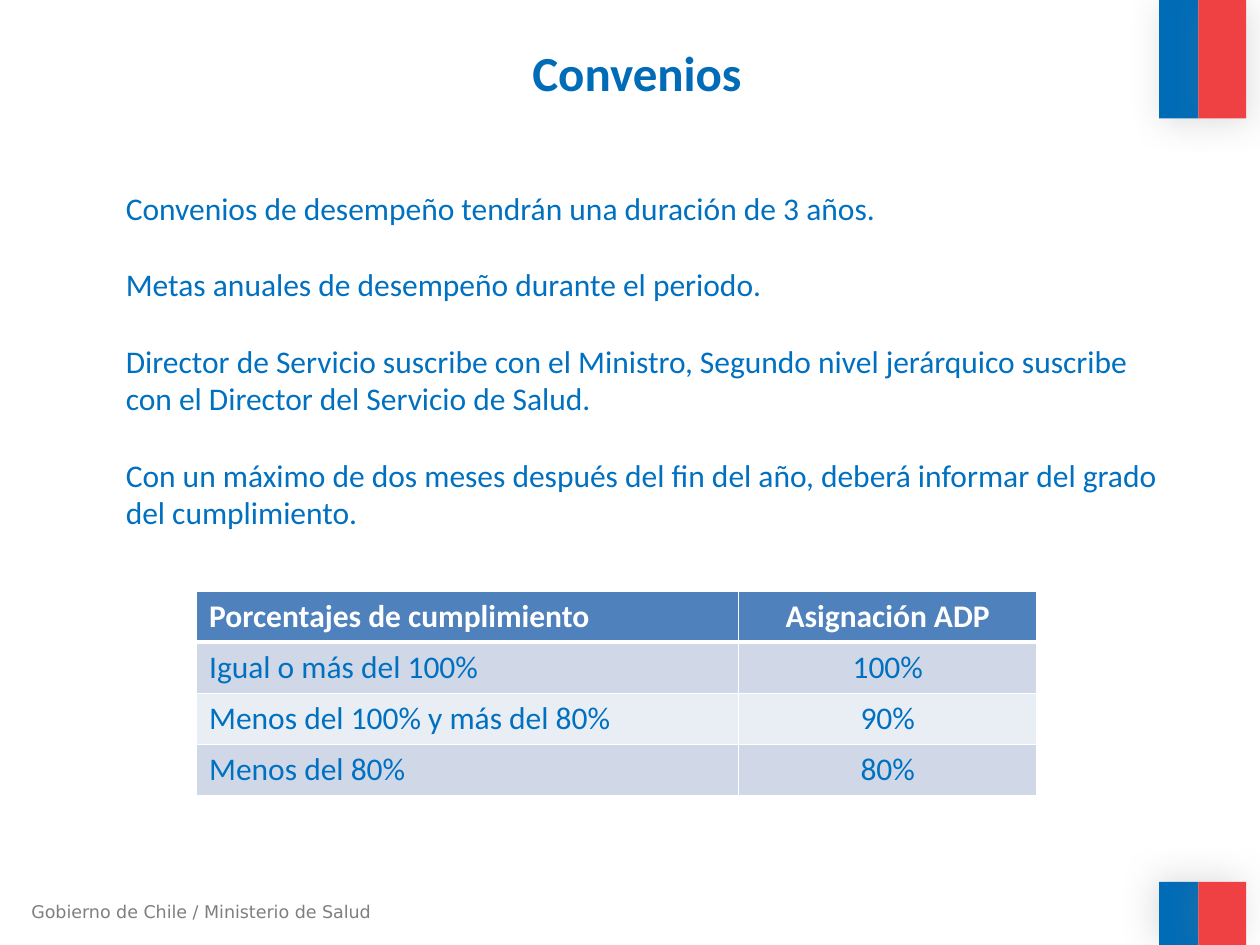
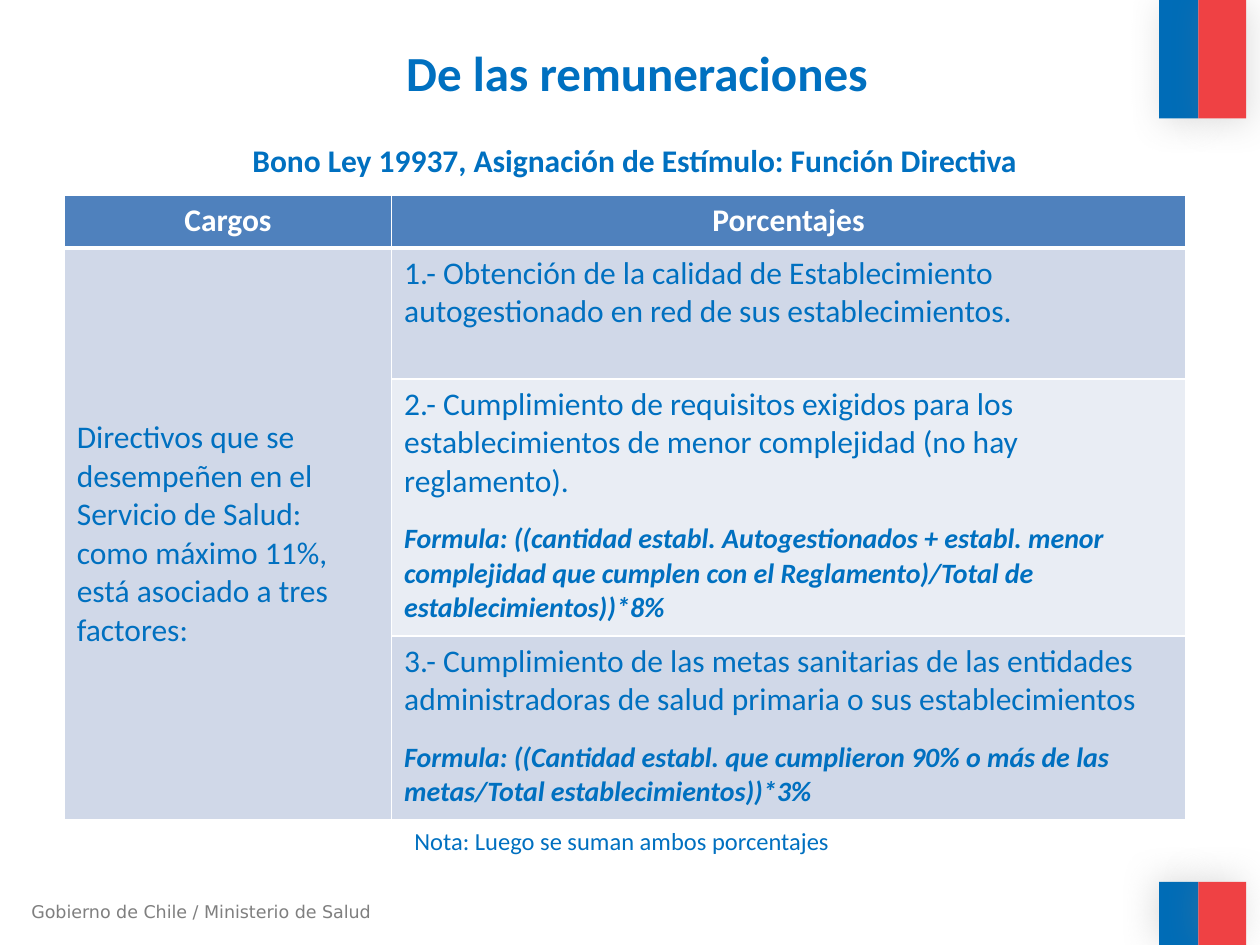
from dataclasses import dataclass

from lxml import etree
from pptx import Presentation
from pptx import util as u
from pptx.dml.color import RGBColor
from pptx.enum import shapes, text
from pptx.oxml import ns

FLAG_BLUE = RGBColor(0x00, 0x6C, 0xB7)
FLAG_RED = RGBColor(0xEF, 0x41, 0x44)
TEXT_BLUE = RGBColor(0x00, 0x70, 0xC0)
FOOTER_GREY = RGBColor(0x7F, 0x7F, 0x7F)
SHADOW_GREY = RGBColor(0x80, 0x80, 0x80)
WHITE = RGBColor(0xFF, 0xFF, 0xFF)
HEADER_FILL = RGBColor(0x4F, 0x81, 0xBD)
ROW_FILLS = RGBColor(0xD0, 0xD8, 0xE8), RGBColor(0xE9, 0xED, 0xF4)

BODY_FONT, FOOTER_FONT = "Calibri", "DejaVu Sans"
LEFT, CENTER = text.PP_ALIGN.LEFT, text.PP_ALIGN.CENTER
TOP, MIDDLE = text.MSO_ANCHOR.TOP, text.MSO_ANCHOR.MIDDLE

# The slide is a grid of 100 columns by 75 rows of square units.
UNIT = u.Inches(0.1)
COLUMNS, ROWS = 100, 75


def units(count):
    return u.Emu(round(count * UNIT))


@dataclass
class Box:
    """A rectangle in grid units."""
    left: float
    top: float
    width: float
    height: float

    def emu(self):
        return [units(v) for v in (self.left, self.top, self.width, self.height)]

    def slice(self, start, end):
        """The part of the box between two shares of its width."""
        return Box(self.left + start * self.width, self.top,
                   (end - start) * self.width, self.height)


TITLE_BOX = Box(12.2, 2.9, 76.7, 13.4)
FLAG_TOP = Box(92, 0, 6.9, 9.4)
FLAG_BOTTOM = Box(92, 70, 6.9, 5)
FOOTER_BOX = Box(1.5, 71, 30.2, 2.7)


@dataclass
class Line:
    """A paragraph with its look."""
    words: str
    size: float = 18
    bold: bool = False
    italic: bool = False
    align: int = LEFT
    before: float = 0
    color: RGBColor = TEXT_BLUE
    face: str = BODY_FONT


def write(frame, lines):
    for index, line in enumerate(lines):
        paragraph = frame.add_paragraph() if index else frame.paragraphs[0]
        paragraph.text = line.words
        paragraph.alignment = line.align
        paragraph.space_before = u.Pt(line.before)
        font = paragraph.font
        font.name, font.size = line.face, u.Pt(line.size)
        font.bold, font.italic = line.bold, line.italic
        font.color.rgb = line.color


def add_text(slide, box, lines, top_margin=0.5):
    frame = slide.shapes.add_textbox(*box.emu()).text_frame
    frame.word_wrap = True
    frame.margin_top = units(top_margin)
    write(frame, lines)


def add_element(parent, tag, **attributes):
    return etree.SubElement(parent, ns.qn(tag),
                            {name: str(value) for name, value in attributes.items()})


def add_shadow(shape, angle):
    effects = add_element(shape.element.spPr, "a:effectLst")
    shadow = add_element(effects, "a:outerShdw", blurRad=u.Pt(20), dist=u.Pt(3),
                         dir=angle * 60000, rotWithShape=0)
    color = add_element(shadow, "a:srgbClr", val=SHADOW_GREY)
    add_element(color, "a:alpha", val=25000)


def add_flag(slide, box, shadow_angle):
    for start, end, color in ((0, 0.45, FLAG_BLUE), (0.45, 1, FLAG_RED)):
        band = slide.shapes.add_shape(shapes.MSO_SHAPE.RECTANGLE,
                                      *box.slice(start, end).emu())
        band.fill.solid()
        band.fill.fore_color.rgb = color
        band.line.fill.background()
        add_shadow(band, shadow_angle)


def add_title(slide, box, words, color):
    title = slide.shapes.title
    title.left, title.top, title.width, title.height = box.emu()
    frame = title.text_frame
    frame.auto_size = text.MSO_AUTO_SIZE.NONE
    frame.vertical_anchor = TOP
    write(frame, [Line(words, 28, bold=True, align=CENTER, color=color)])


def add_base_slide(deck, title, title_color):
    slide = deck.slides.add_slide(deck.slide_layouts[5])
    add_flag(slide, FLAG_TOP, 45)
    add_flag(slide, FLAG_BOTTOM, 215)
    add_text(slide, FOOTER_BOX, [Line("Gobierno de Chile / Ministerio de Salud", 10,
                                      color=FOOTER_GREY, face=FOOTER_FONT)])
    add_title(slide, TITLE_BOX, title, title_color)
    return slide


def add_borders(cell, row):
    """White rules, with a thick one between the header and the body."""
    properties = cell._tc.get_or_add_tcPr()
    widths = {"L": 1, "R": 1, "T": 3 if row == 1 else 1, "B": 3 if row == 0 else 1}
    for side, width in widths.items():
        border = add_element(properties, f"a:ln{side}", w=u.Pt(width))
        add_element(add_element(border, "a:solidFill"), "a:srgbClr", val=WHITE)


def header(words, align=CENTER):
    return [Line(words, bold=True, align=align, color=WHITE)]


def add_grid_table(slide, box, column_shares, row_heights, rows):
    """Each entry of rows holds the lines of its cells; None is left to a merge."""
    table = slide.shapes.add_table(len(rows), len(column_shares), *box.emu()).table
    for column, share in zip(table.columns, column_shares):
        column.width = units(share * box.width)
    for r, (height, row) in enumerate(zip(row_heights, rows)):
        table.rows[r].height = units(height)
        for c, lines in enumerate(row):
            cell = table.cell(r, c)
            add_borders(cell, r)
            cell.fill.solid()
            cell.fill.fore_color.rgb = ROW_FILLS[(r - 1) % 2] if r else HEADER_FILL
            if lines:
                write(cell.text_frame, lines)
    return table


def build_agreements(deck):
    slide = add_base_slide(deck, "Convenios", FLAG_BLUE)
    terms = (
        "Convenios de desempeño tendrán una duración de 3 años.",
        "Metas anuales de desempeño durante el periodo.",
        "Director de Servicio suscribe con el Ministro, Segundo nivel jerárquico "
        "suscribe con el Director del Servicio de Salud.",
        "Con un máximo de dos meses después del fin del año, deberá informar del "
        "grado del cumplimiento.",
    )
    add_text(slide, Box(9, 11.5, 85, 34.3),
             [Line(term, before=22 if i else 0) for i, term in enumerate(terms)],
             top_margin=3.5)
    levels = (("Igual o más del 100%", "100%"),
              ("Menos del 100% y más del 80%", "90%"),
              ("Menos del 80%", "80%"))
    rows = [(header("Porcentajes de cumplimiento", LEFT), header("Asignación ADP"))]
    rows += [([Line(level)], [Line(share, align=CENTER)]) for level, share in levels]
    table = add_grid_table(slide, Box(15.6, 46.9, 66.7, 16.2), (0.645, 0.355),
                           [4.06] * 4, rows)
    for cell in table.rows[0].cells:
        cell.vertical_anchor = MIDDLE


def factor(words, formula):
    return [Line(words), Line(formula, 16, bold=True, italic=True, before=12.2)]


def build_pay(deck):
    slide = add_base_slide(deck, "De las remuneraciones", TEXT_BLUE)
    add_text(slide, Box(5.1, 10.7, 90.6, 4),
             [Line("Bono Ley 19937, Asignación de Estímulo: Función Directiva",
                   bold=True, align=CENTER)])
    managers = [Line("Directivos que se desempeñen en el Servicio de Salud: como "
                     "máximo 11%, está asociado a tres factores:")]
    rows = [
        (header("Cargos"), header("Porcentajes")),
        (managers, [Line("1.- Obtención de la calidad de Establecimiento "
                         "autogestionado en red de sus establecimientos.")]),
        (None, factor("2.- Cumplimiento de requisitos exigidos para los "
                      "establecimientos de menor complejidad (no hay reglamento).",
                      "Formula: ((cantidad establ. Autogestionados + establ. menor "
                      "complejidad que cumplen con el Reglamento)/Total de "
                      "establecimientos))*8%")),
        (None, factor("3.- Cumplimiento de las metas sanitarias de las entidades "
                      "administradoras de salud primaria o sus establecimientos",
                      "Formula: ((Cantidad establ. que cumplieron 90% o más de las "
                      "metas/Total establecimientos))*3%")),
    ]
    table = add_grid_table(slide, Box(5.1, 15.5, 89, 49.6), (0.292, 0.708),
                           (4.2, 10.4, 20.4, 14.6), rows)
    table.cell(1, 0).merge(table.cell(3, 0))
    table.cell(1, 0).vertical_anchor = MIDDLE
    add_text(slide, Box(31.9, 65.1, 44.1, 3.4),
             [Line("Nota: Luego se suman ambos porcentajes", 14)])


def main():
    deck = Presentation()
    deck.slide_width, deck.slide_height = units(COLUMNS), units(ROWS)
    build_agreements(deck)
    build_pay(deck)
    deck.save("out.pptx")


if __name__ == "__main__":
    main()
